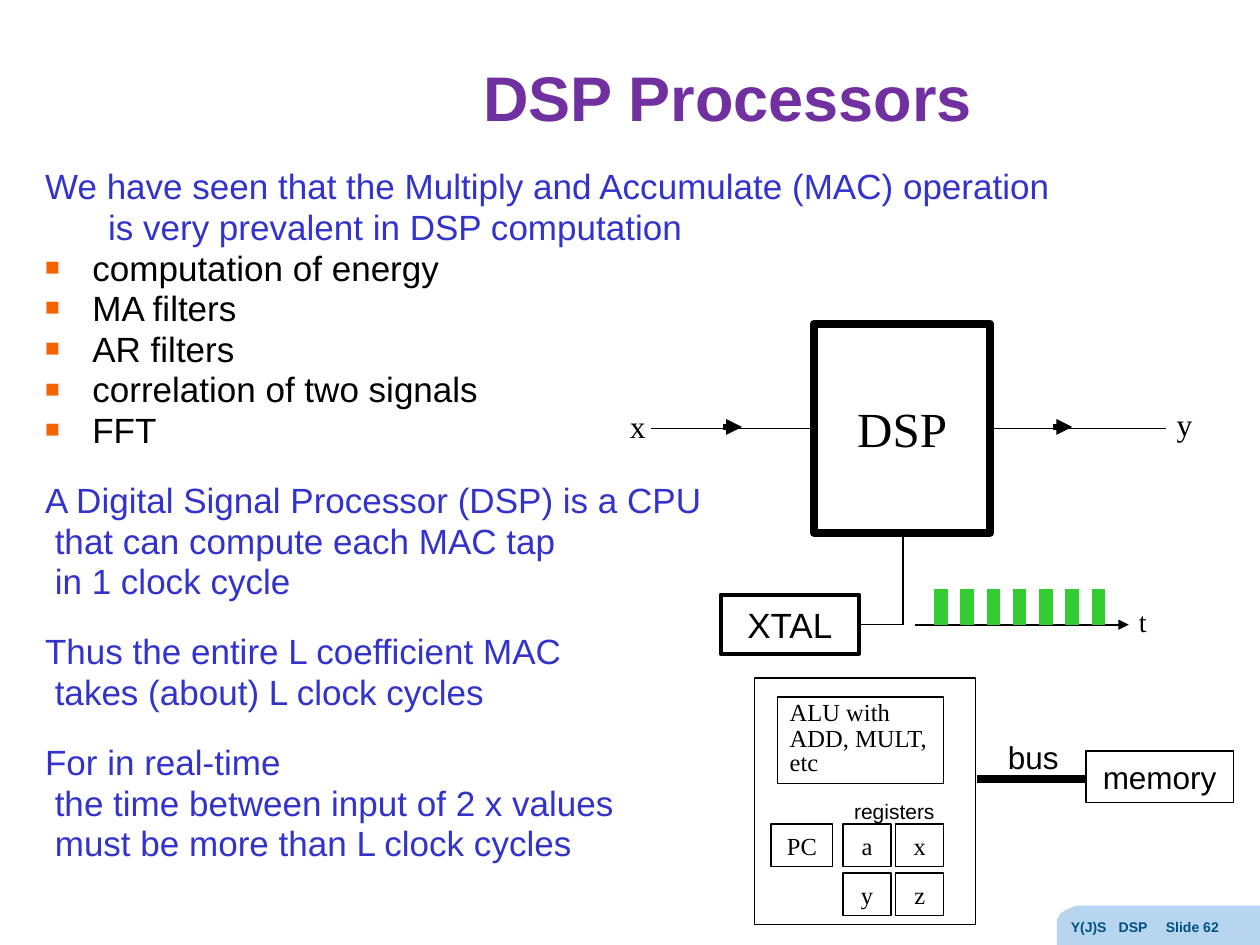
import pptx
import pptx.util
import pptx.dml.color
import pptx.oxml.ns
from pptx.enum.shapes import MSO_SHAPE, MSO_CONNECTOR
from pptx.enum.text import MSO_ANCHOR, PP_ALIGN
from lxml import etree

Pt = pptx.util.Pt
qn = pptx.oxml.ns.qn

SANS, SERIF = "Arial", "Times New Roman"
BLACK, WHITE, GREEN = "000000", "FFFFFF", "33CC33"
BLUE, PURPLE, ORANGE = "3333CC", "7030A0", "F46300"
FOOTER_FILL, FOOTER_TEXT = "B7D5EF", "005081"

FOOTER_OUTLINE = [(720, 517.5), (720, 540), (604, 540), (604, 528.5), (604, 525.5),
                  (606, 522), (609, 520), (612.5, 518.5), (615.5, 517.5)]

BODY = [
    ("lead", "We have seen that the Multiply and Accumulate (MAC) operation"),
    ("sub", "is very prevalent in DSP computation"),
    ("bullet", "computation of energy"),
    ("bullet", "MA filters"),
    ("bullet", "AR filters"),
    ("bullet", "correlation of two signals"),
    ("bullet", "FFT"),
    ("start", "A Digital Signal Processor (DSP) is a CPU"),
    ("plain", " that can compute each MAC tap"),
    ("plain", " in 1 clock cycle"),
    ("start", "Thus the entire L coefficient MAC"),
    ("plain", " takes (about) L clock cycles"),
    ("start", "For in real-time"),
    ("plain", " the time between input of 2 x values"),
    ("plain", " must be more than L clock cycles"),
]
LINE_SPACING = {"lead": 1.2, "start": 1.5}

SIGNAL_LINE = (372.2, 244.8, 666, 244.8, 0.75, False)
CLOCK_LINES = [
    (491, 357, 516, 357, 0.75, False),
    (516, 357, 516, 304, 0.75, False),
    (522.7, 357, 645, 357, 1, True),
    (413.3, 244, 424, 244, 3, True),
    (602, 244, 612.7, 244, 3, True),
]
SIGNAL_BOXES = [
    ("DSP", (465.1, 185, 100.8, 119.5), WHITE, 4.5, 28, SERIF),
    ("XTAL", (411.8, 339.8, 79.2, 33.8), None, 2.25, 20, SANS),
]
SIGNAL_LABELS = [
    ("t", (643.7, 342, 23, 26.6), 16, SERIF),
    ("x", (352.8, 229, 23, 28.8), 18, SERIF),
    ("y", (665.3, 228.2, 23, 28.8), 18, SERIF),
]
PULSE_COUNT, PULSE_LEFT, PULSE_PITCH = 7, 534.2, 15

CPU_FRAME = (431.3, 387.4, 126, 141.1)
BUS_LINE = (558, 445, 620.6, 445, 4.5, False)
MEMORY_BOX = ("memory", (620.6, 429.1, 84.2, 29.5), None, 0.75, 18, SANS)
ALU_TEXT = ["ALU with", "ADD, MULT, etc"]
ALU_FRAME = (444.2, 398.2, 95, 49.7)
PC_BOX = ("PC", (440.6, 470.9, 35.3, 24.5), None, 0.75, 14, SERIF)
REGISTERS = [["a", "x"], ["y", "z"]]
REGISTER_LEFT, REGISTER_TOP, REGISTER_STEP = 481.7, 470.9, (30.2, 28)
CPU_LABELS = [
    ("bus", (568.8, 418.3, 56.9, 28.8), 18, SANS),
    ("registers", (481, 452.9, 64.8, 21.6), 12, SANS),
]


def color(value):
    return pptx.dml.color.RGBColor.from_string(value)


def add_run(paragraph, text, size, font, hue=BLACK, bold=False):
    run = paragraph.add_run()
    run.text = text
    run.font.size = Pt(size)
    run.font.name = font
    run.font.bold = bold
    run.font.color.rgb = color(hue)


def set_space_before(paragraph, percent):
    paragraph.space_before = Pt(0)
    spacing = paragraph._p.get_or_add_pPr().find(qn("a:spcBef"))
    for child in list(spacing):
        spacing.remove(child)
    etree.SubElement(spacing, qn("a:spcPct"), val=str(percent * 1000))


def add_bullet(properties):
    bullet_color = etree.SubElement(properties, qn("a:buClr"))
    etree.SubElement(bullet_color, qn("a:srgbClr"), val=ORANGE)
    etree.SubElement(properties, qn("a:buSzPct"), val="70000")
    etree.SubElement(properties, qn("a:buFont"), typeface=SANS)
    etree.SubElement(properties, qn("a:buChar"), char="■")


def add_box(shapes, frame, fill=None, weight=0.75, line=BLACK):
    shape = shapes.add_shape(MSO_SHAPE.RECTANGLE, *map(Pt, frame))
    shape.shadow.inherit = False
    if fill:
        shape.fill.solid()
        shape.fill.fore_color.rgb = color(fill)
    else:
        shape.fill.background()
    shape.line.color.rgb = color(line)
    shape.line.width = Pt(weight)
    return shape


def add_text_box(box, text, size, font):
    box.text_frame.vertical_anchor = MSO_ANCHOR.MIDDLE
    paragraph = box.text_frame.paragraphs[0]
    paragraph.alignment = PP_ALIGN.CENTER
    add_run(paragraph, text, size, font)


def add_labelled_box(shapes, text, frame, fill, weight, size, font):
    add_text_box(add_box(shapes, frame, fill, weight), text, size, font)


def add_label(shapes, text, frame, size, font):
    label = shapes.add_textbox(*map(Pt, frame))
    label.text_frame.word_wrap = True
    add_run(label.text_frame.paragraphs[0], text, size, font)


def add_line(shapes, x1, y1, x2, y2, weight, arrow):
    line = shapes.add_connector(MSO_CONNECTOR.STRAIGHT, Pt(x1), Pt(y1), Pt(x2), Pt(y2))
    line.line.color.rgb = color(BLACK)
    line.line.width = Pt(weight)
    if arrow:
        etree.SubElement(line.line._get_or_add_ln(), qn("a:tailEnd"), type="triangle")
    etree.SubElement(line._element.spPr, qn("a:effectLst"))


def add_footer(shapes):
    builder = shapes.build_freeform(*map(Pt, FOOTER_OUTLINE[0]))
    builder.add_line_segments([(Pt(x), Pt(y)) for x, y in FOOTER_OUTLINE[1:]], close=True)
    tab = builder.convert_to_shape()
    tab.shadow.inherit = False
    tab.fill.solid()
    tab.fill.fore_color.rgb = color(FOOTER_FILL)
    tab.line.fill.background()
    footer = shapes.add_textbox(Pt(604.8), Pt(521.3), Pt(115.2), Pt(18.7))
    footer.text_frame.word_wrap = True
    paragraph = footer.text_frame.paragraphs[0]
    stops = etree.SubElement(paragraph._p.get_or_add_pPr(), qn("a:tabLst"))
    for position in (27.4, 54.3):
        etree.SubElement(stops, qn("a:tab"), pos=str(Pt(position)), algn="l")
    add_run(paragraph, "Y(J)S\tDSP\tSlide 62", 8, SANS, FOOTER_TEXT, True)


def add_title(shapes):
    title = shapes.add_textbox(Pt(152.6), Pt(13), Pt(526.3), Pt(90))
    title.text_frame.word_wrap = True
    title.text_frame.vertical_anchor = MSO_ANCHOR.MIDDLE
    paragraph = title.text_frame.paragraphs[0]
    paragraph.alignment = PP_ALIGN.CENTER
    paragraph.line_spacing = 0.9
    add_run(paragraph, "DSP Processors", 36, SANS, PURPLE, True)


def add_body(shapes):
    frame = shapes.add_textbox(Pt(18.7), Pt(85.7), Pt(689), Pt(427)).text_frame
    frame.word_wrap = True
    for index, (kind, text) in enumerate(BODY):
        paragraph = frame.add_paragraph() if index else frame.paragraphs[0]
        paragraph.line_spacing = LINE_SPACING.get(kind, 0.8)
        set_space_before(paragraph, 20)
        margin, indent = (58.5, -22.5) if kind == "sub" else (27, -27)
        properties = paragraph._p.get_or_add_pPr()
        properties.set("marL", str(Pt(margin)))
        properties.set("indent", str(Pt(indent)))
        if kind == "bullet":
            add_bullet(properties)
        add_run(paragraph, text, 20, SANS, BLACK if kind == "bullet" else BLUE)


def add_signal_diagram(shapes):
    add_line(shapes, *SIGNAL_LINE)
    for box in SIGNAL_BOXES:
        add_labelled_box(shapes, *box)
    for line in CLOCK_LINES:
        add_line(shapes, *line)
    for index in range(PULSE_COUNT):
        add_box(shapes, (PULSE_LEFT + index * PULSE_PITCH, 337, 7, 20), GREEN, 0.75, GREEN)
    for label in SIGNAL_LABELS:
        add_label(shapes, *label)


def add_cpu_diagram(shapes):
    add_box(shapes, CPU_FRAME, WHITE)
    add_line(shapes, *BUS_LINE)
    alu = add_box(shapes, ALU_FRAME).text_frame
    alu.vertical_anchor = MSO_ANCHOR.TOP
    for index, text in enumerate(ALU_TEXT):
        paragraph = alu.add_paragraph() if index else alu.paragraphs[0]
        paragraph.alignment = PP_ALIGN.LEFT
        paragraph.line_spacing = 0.8
        set_space_before(paragraph, 10)
        add_run(paragraph, text, 14, SERIF)
    registers = [(name, (REGISTER_LEFT + column * REGISTER_STEP[0],
                         REGISTER_TOP + row * REGISTER_STEP[1], 27.4, 24.5), None, 0.75, 14, SERIF)
                 for row, names in enumerate(REGISTERS) for column, name in enumerate(names)]
    for box in [MEMORY_BOX, PC_BOX] + registers:
        add_labelled_box(shapes, *box)
    for label in CPU_LABELS:
        add_label(shapes, *label)


def main():
    presentation = pptx.Presentation()
    presentation.slide_width, presentation.slide_height = Pt(720), Pt(540)
    slide = presentation.slides.add_slide(presentation.slide_layouts[6])
    add_footer(slide.shapes)
    add_title(slide.shapes)
    add_body(slide.shapes)
    add_signal_diagram(slide.shapes.add_group_shape().shapes)
    add_cpu_diagram(slide.shapes.add_group_shape().shapes)
    presentation.save("out.pptx")


if __name__ == "__main__":
    main()
